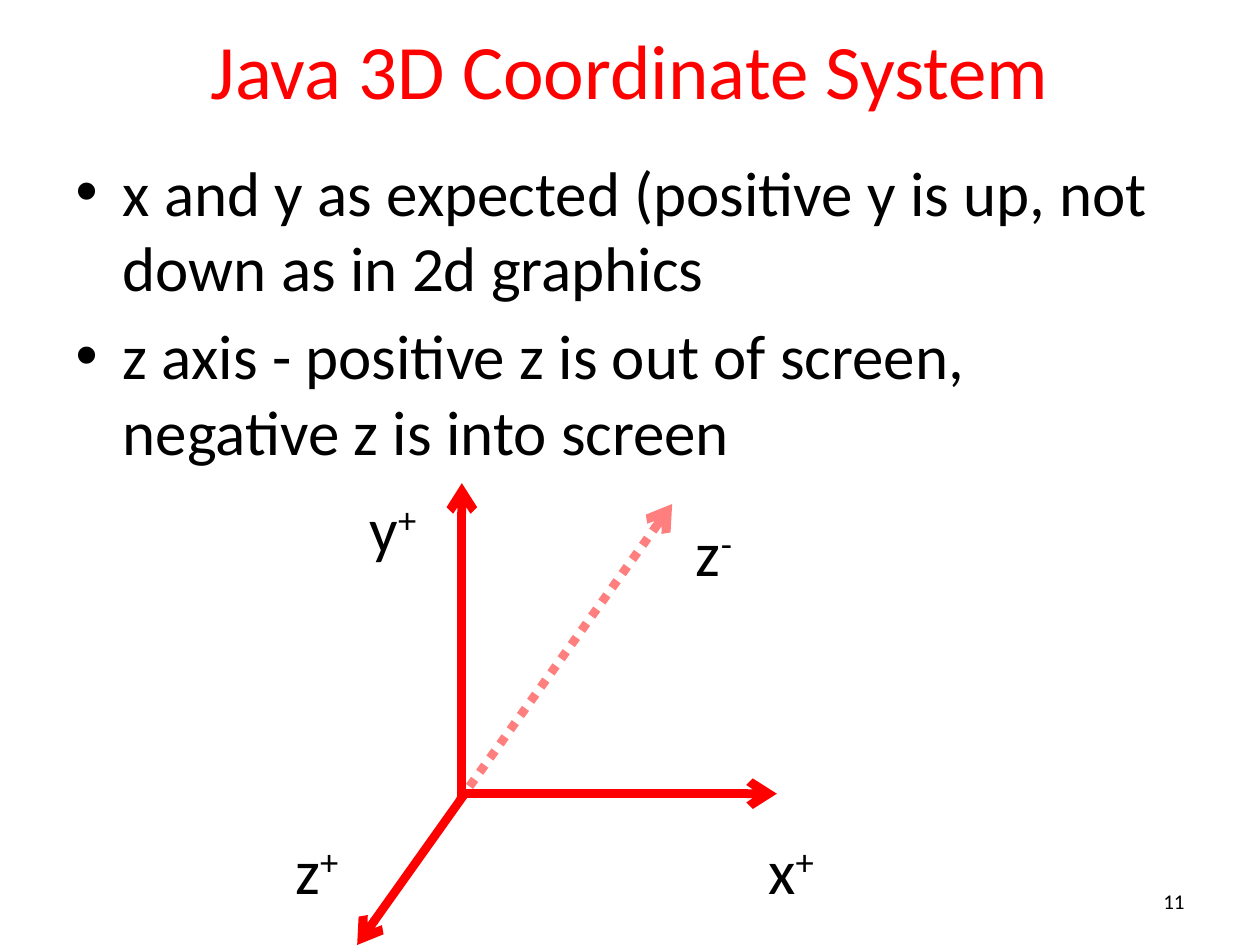
from lxml.etree import SubElement
from pptx import Presentation
from pptx.dml.color import RGBColor
from pptx.enum.dml import MSO_LINE as Dash
from pptx.enum.shapes import MSO_CONNECTOR as Link
from pptx.enum.text import MSO_ANCHOR as Anchor, MSO_AUTO_SIZE as Fit, PP_ALIGN as Align
from pptx.oxml.ns import qn
from pptx.util import Cm, Pt

RED = RGBColor(0xFF, 0x00, 0x00)
BLACK = RGBColor(0x00, 0x00, 0x00)
FONT = "Calibri"

# start x, start y, end x, end y in cm
AXES = [
    (9.31, 16.09, 9.31, 9.74),
    (9.31, 16.0, 15.66, 16.0),
    (9.37, 16.0, 7.2, 19.05),
]
DEPTH = (9.26, 16.14, 13.55, 10.16)

# axis, sign, left, top, width in cm
LABELS = [
    ("y", "+", 7.2, 9.74, 1.52),
    ("x", "+", 15.24, 16.63, 1.52),
    ("z", "+", 5.7, 16.63, 1.45),
    ("z", "-", 13.78, 10.23, 1.3),
]


def style(para, size, color=BLACK):
    font = para.font
    font.name, font.size = FONT, Pt(size)
    font.color.rgb = color


def place(shape, left, top, width, height):
    shape.left, shape.top = Cm(left), Cm(top)
    shape.width, shape.height = Cm(width), Cm(height)


def add_title(slide, text):
    title = slide.shapes.title
    place(title, 1.27, -0.21, 22.86, 3.18)
    frame = title.text_frame
    frame.text = text
    frame.auto_size = Fit.NONE
    frame.vertical_anchor = Anchor.MIDDLE
    para = frame.paragraphs[0]
    para.alignment = Align.CENTER
    style(para, 44, RED)


def add_list(slide, items):
    body = slide.placeholders[1]
    place(body, 1.27, 2.96, 22.86, 14.61)
    frame = body.text_frame
    frame.text = "\n".join(items)
    frame.auto_size = Fit.NONE
    for para in frame.paragraphs:
        style(para, 36)


def add_arrow(slide, ends, faint=False):
    """Draw an axis; a faint one is dotted and half transparent."""
    arrow = slide.shapes.add_connector(Link.STRAIGHT, *map(Cm, ends))
    line = arrow.line
    line.width = Pt(5)
    line.color.rgb = RED
    props = arrow._element.spPr
    if faint:
        line.dash_style = Dash.ROUND_DOT
        tint = next(props.iter(qn("a:srgbClr")))
        SubElement(tint, qn("a:alpha"), val="49000")
    SubElement(props.find(qn("a:ln")), qn("a:tailEnd"), type="arrow")
    SubElement(props, qn("a:effectLst"))


def add_label(slide, axis, sign, left, top, width):
    box = slide.shapes.add_textbox(Cm(left), Cm(top), Cm(width), Cm(1.8))
    frame = box.text_frame
    frame.word_wrap = False
    frame.auto_size = Fit.SHAPE_TO_FIT_TEXT
    para = frame.paragraphs[0]
    style(para, 36)
    para.add_run().text = axis
    power = para.add_run()
    power.text = sign
    power.font._element.set("baseline", "30000")


def add_number(slide, text):
    box = slide.shapes.add_textbox(Cm(18.2), Cm(17.66), Cm(5.93), Cm(1.01))
    frame = box.text_frame
    frame.text = text
    frame.word_wrap = True
    frame.vertical_anchor = Anchor.MIDDLE
    para = frame.paragraphs[0]
    para.alignment = Align.RIGHT
    style(para, 12)


def main():
    deck = Presentation()
    deck.slide_width, deck.slide_height = Cm(25.4), Cm(19.05)
    slide = deck.slides.add_slide(deck.slide_layouts[1])
    add_title(slide, "Java 3D Coordinate System")
    add_list(slide, [
        "x and y as expected (positive y is up, not down as in 2d graphics",
        "z axis - positive z is out of screen, negative z is into screen",
    ])
    add_number(slide, "11")
    for ends in AXES:
        add_arrow(slide, ends)
    add_arrow(slide, DEPTH, faint=True)
    for label in LABELS:
        add_label(slide, *label)
    deck.save("out.pptx")


if __name__ == "__main__":
    main()
